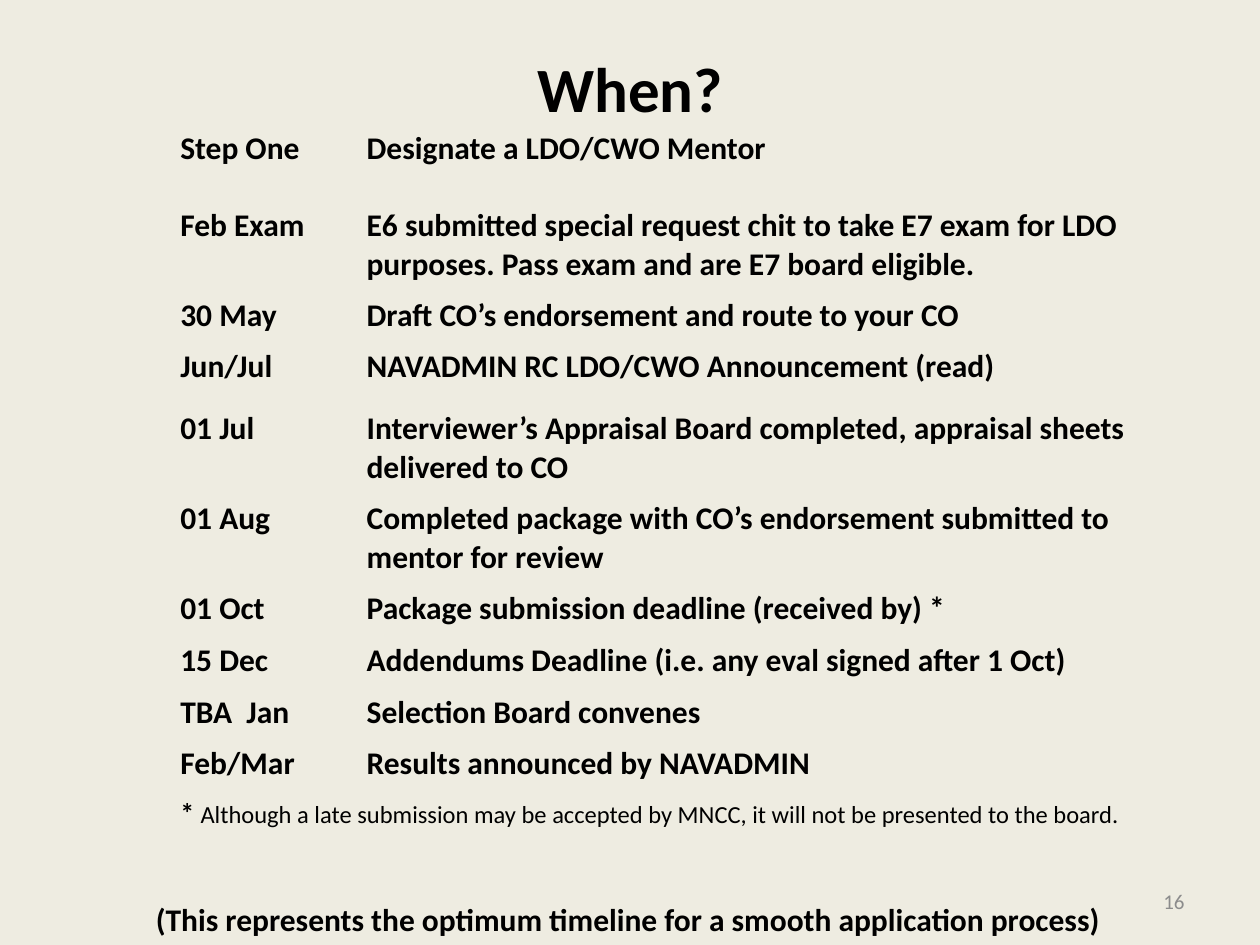
from pptx import Presentation
from pptx.dml.color import RGBColor
from pptx.enum.text import MSO_ANCHOR as Anchor, MSO_AUTO_SIZE as AutoSize, PP_ALIGN as Align
from pptx.oxml.ns import qn
from pptx.util import Pt
from lxml.etree import SubElement

FONT = "Calibri"
BLACK = "000000"
GREY = "8C8C8C"
CREAM = "EEECE1"
BORDERS = ("a:lnL", "a:lnR", "a:lnT", "a:lnB")
LINE_HEIGHT = 22
ROW_HEIGHT = 29.5
TWO_LINES = 51.5

TIMELINE = [
    ("Step One\nFeb Exam",
     "Designate a LDO/CWO Mentor\nE6 submitted special request chit to take E7 exam "
     "for LDO purposes. Pass exam and are E7 board eligible.", 95),
    ("30 May", "Draft CO’s endorsement and route to your CO", ROW_HEIGHT),
    ("Jun/Jul", "NAVADMIN RC LDO/CWO Announcement (read)", 35.5),
    ("01 Jul", "Interviewer’s Appraisal Board completed, appraisal sheets delivered to CO", TWO_LINES),
    ("01 Aug", "Completed package with CO’s endorsement submitted to mentor for review", TWO_LINES),
    ("01 Oct", "Package submission deadline (received by) *", ROW_HEIGHT),
    ("15 Dec", "Addendums Deadline (i.e. any eval signed after 1 Oct)", ROW_HEIGHT),
    ("TBA  Jan", "Selection Board convenes", ROW_HEIGHT),
    ("Feb/Mar", "Results announced by NAVADMIN", ROW_HEIGHT),
]
FOOTNOTE = "Although a late submission may be accepted by MNCC, it will not be presented to the board."


def colour(value):
    return RGBColor.from_string(value)


def format_font(font, size, bold=True, shade=BLACK):
    font.name = FONT
    font.size = Pt(size)
    font.bold = bold
    font.color.rgb = colour(shade)


def format_frame(frame, text, size, align, bold=True, shade=BLACK):
    frame.text = text
    for index, para in enumerate(frame.paragraphs):
        para.alignment = align
        if index:
            para.space_before = Pt(LINE_HEIGHT)
        for span in para.runs:
            format_font(span.font, size, bold, shade)


def add_title(page, text):
    title = page.shapes.title
    title.left, title.top, title.width, title.height = Pt(36), Pt(21.6), Pt(648), Pt(56)
    format_frame(title.text_frame, text, 36, Align.CENTER)
    title.text_frame.vertical_anchor = Anchor.MIDDLE


def add_text(page, text, left, top, width, height, size, align, **style):
    box = page.shapes.add_textbox(Pt(left), Pt(top), Pt(width), Pt(height))
    frame = box.text_frame
    frame.word_wrap = True
    format_frame(frame, text, size, align, **style)
    return frame


def clear_cell(cell):
    properties = cell._tc.get_or_add_tcPr()
    for border in BORDERS:
        SubElement(SubElement(properties, qn(border)), qn("a:noFill"))
    cell.fill.background()


def add_footnote(table):
    row = len(TIMELINE)
    cell = table.cell(row, 0)
    cell.merge(table.cell(row, 1))
    para = cell.text_frame.paragraphs[0]
    for text, size, bold in (("* ", 16, True), (FOOTNOTE, 14, False)):
        span = para.add_run()
        span.text = text
        format_font(span.font, size, bold)


def add_timeline(page):
    heights = [height for _, _, height in TIMELINE] + [ROW_HEIGHT]
    frame = page.shapes.add_table(len(heights), 2, Pt(95.8), Pt(70.6), Pt(573), Pt(sum(heights)))
    table = frame.table
    table.first_row = False
    table.horz_banding = False
    for column, width in zip(table.columns, (106.5, 466.5)):
        column.width = Pt(width)
    for row, height in zip(table.rows, heights):
        row.height = Pt(height)
    for cell in table.iter_cells():
        clear_cell(cell)
    for row, (date, task, _) in enumerate(TIMELINE):
        for column, text in enumerate((date, task)):
            format_frame(table.cell(row, column).text_frame, text, 18, Align.LEFT)
    add_footnote(table)


def main():
    deck = Presentation()
    deck.slide_width, deck.slide_height = Pt(720), Pt(540)
    page = deck.slides.add_slide(deck.slide_layouts[5])
    page.background.fill.solid()
    page.background.fill.fore_color.rgb = colour(CREAM)
    add_title(page, "When?")
    caption = add_text(page, "(This represents the optimum timeline for a smooth application process)",
                       -1, 511, 720, 29, 18, Align.CENTER)
    caption.auto_size = AutoSize.SHAPE_TO_FIT_TEXT
    add_timeline(page)
    number = add_text(page, "16", 516, 500.5, 168, 28.8, 12, Align.RIGHT, bold=False, shade=GREY)
    number.vertical_anchor = Anchor.MIDDLE
    deck.save("out.pptx")


if __name__ == "__main__":
    main()
